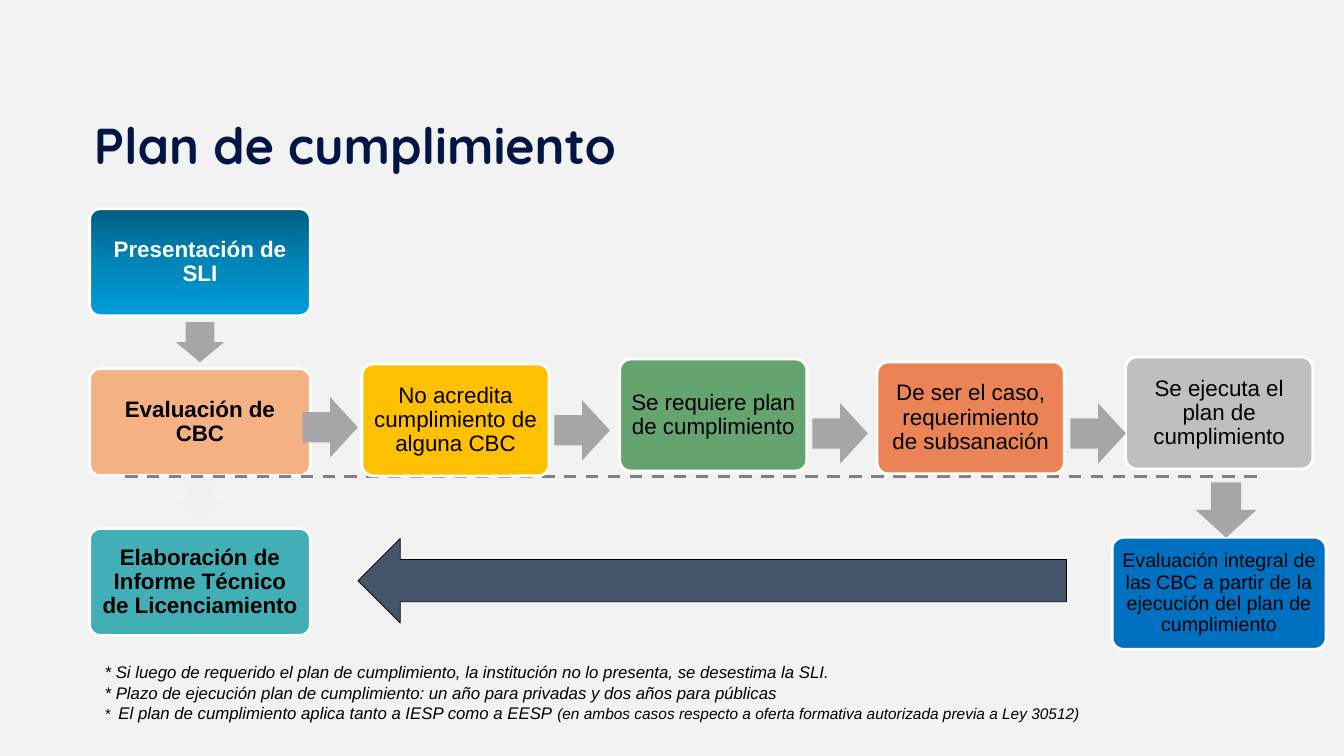
from copy import deepcopy

from lxml import etree
from pptx import Presentation
from pptx.dml.color import RGBColor
from pptx.enum.dml import MSO_LINE
from pptx.enum.shapes import MSO_CONNECTOR, MSO_SHAPE
from pptx.enum.text import MSO_ANCHOR, PP_ALIGN
from pptx.oxml.ns import qn
from pptx.util import Pt

CARD, ARROW = MSO_SHAPE.ROUNDED_RECTANGLE, MSO_SHAPE.RIGHT_ARROW
CENTER, LEFT = PP_ALIGN.CENTER, PP_ALIGN.LEFT
MIDDLE, TOP = MSO_ANCHOR.MIDDLE, MSO_ANCHOR.TOP

COLORS = {
    "background": "F2F2F2", "title": "011643", "black": "000000", "white": "FFFFFF",
    "deep": "005D81", "mid": "0084B7", "bright": "009DD9",
    "peach": "F4B183", "teal": "42AFB6", "yellow": "FFC000", "green": "65A36F",
    "orange": "EA8456", "silver": "BFBFBF", "blue": "0070C0",
    "arrow": "A6A6A6", "faint": "F1F0F0", "slate": "44546A", "dash": "808080",
}

# Content
TITLE = "Plan de cumplimiento"
STAGES = [  # text, fill, text colour
    ("Presentación de SLI", "deep", "white"),
    ("Evaluación de CBC", "peach", "black"),
    ("Elaboración de Informe Técnico de Licenciamiento", "teal", "black"),
]
STAGE_ARROWS = ["arrow", "faint"]
STEPS = [  # text, fill, left, top
    ("No acredita cumplimiento de alguna CBC", "yellow", 258.5, 260),
    ("Se requiere plan de cumplimiento", "green", 442.6, 256.5),
    ("De ser el caso, requerimiento de subsanación", "orange", 626.5, 258.5),
    ("Se ejecuta el plan de cumplimiento", "silver", 804, 255),
]
REVIEW = "Evaluación integral de las CBC a partir de la ejecución del plan de cumplimiento"
STEP_ARROWS = [  # left, top, rotation
    (216, 283.7, 0), (396, 285.8, 0), (580.3, 288, 0), (764.6, 288, 0), (856, 342.7, 90),
]
NOTES = [  # runs of (text, size)
    [("* Si luego de requerido el plan de cumplimiento, la institución no lo presenta, "
      "se desestima la SLI.", 12)],
    [("* Plazo de ejecución plan de cumplimiento: un año para privadas "
      "y dos años para públicas", 12)],
    [("*  ", 10.5), ("El plan de cumplimiento aplica tanto a IESP como a EESP", 12),
     (" (en ambos casos respecto a oferta formativa autorizada previa a Ley 30512)", 11)],
]

# Layout
STAGE_X, STAGE_Y, STAGE_W, STAGE_H, STAGE_PITCH = 64, 149.1, 157.7, 76.4, 114.2
STEP_W, STEP_H = 133.8, 80
DOWN_W, DOWN_H = 28.7, 34.4

prs = Presentation()
prs.slide_width, prs.slide_height = Pt(960), Pt(540)
s = prs.slides.add_slide(prs.slide_layouts[6])


def rgb(name):
    return RGBColor.from_string(COLORS[name])


s.background.fill.solid()
s.background.fill.fore_color.rgb = rgb("background")


def style_run(r, size, color, font="Arial", bold=False, italic=False):
    r.font.name, r.font.size = font, Pt(size)
    r.font.bold, r.font.italic = bold, italic
    r.font.color.rgb = rgb(color)


def add_shape(kind, box, fill, line=None, width=0, adjust=(), rotation=0):
    sp = s.shapes.add_shape(kind, *map(Pt, box))
    sp.shadow.inherit = False
    sp.rotation = rotation
    for i, value in enumerate(adjust):
        sp.adjustments[i] = value
    sp.fill.solid()
    sp.fill.fore_color.rgb = rgb(fill)
    if line:
        sp.line.color.rgb = rgb(line)
        sp.line.width = Pt(width)
    else:
        sp.line.fill.background()
    return sp


def add_card(text, box, fill, color="black", size=16, bold=False):
    sp = add_shape(CARD, box, fill, "white", 2, [0.1])
    tf = sp.text_frame
    tf.word_wrap, tf.vertical_anchor = True, MIDDLE
    tf.margin_left = tf.margin_right = tf.margin_top = tf.margin_bottom = Pt(5)
    tf.text = text
    p = tf.paragraphs[0]
    p.alignment, p.line_spacing = CENTER, 0.9
    style_run(p.runs[0], size, color, bold=bold)
    return sp


def add_text(box, anchor):
    tf = s.shapes.add_textbox(*map(Pt, box)).text_frame
    tf.word_wrap, tf.vertical_anchor = True, anchor
    return tf


# Title
tf = add_text((60, 81.4, 828, 49), MIDDLE)
tf.text = TITLE
tf.paragraphs[0].line_spacing = 0.9
style_run(tf.paragraphs[0].runs[0], 36, "title", "Quicksand", bold=True)

# Stages down the left side
stage_cards = [
    add_card(text, (STAGE_X, STAGE_Y + i * STAGE_PITCH, STAGE_W, STAGE_H), fill, color, bold=True)
    for i, (text, fill, color) in enumerate(STAGES)
]
gap = STAGE_PITCH - STAGE_H
for i, fill in enumerate(STAGE_ARROWS):
    middle = STAGE_Y + STAGE_H + i * STAGE_PITCH + gap / 2
    left = STAGE_X + (STAGE_W - DOWN_W) / 2
    add_shape(ARROW, (left, middle - DOWN_H / 2, DOWN_W, DOWN_H), fill,
              adjust=[0.6, 0.5], rotation=90)

# Three-stop gradient on the first stage
fill = stage_cards[0].fill
fill.gradient()
fill.gradient_angle = 270
for stop, name, position in zip(fill.gradient_stops, ("mid", "bright"), (0.5, 1)):
    stop.color.rgb = rgb(name)
    stop.position = position
stops = stage_cards[0]._element.spPr.find(".//" + qn("a:gsLst"))
stops.insert(0, deepcopy(stops[0]))
first = fill.gradient_stops[0]
first.color.rgb, first.position = rgb("deep"), 0

# Dashed divider
divider = s.shapes.add_connector(MSO_CONNECTOR.STRAIGHT, Pt(89.3), Pt(340.6), Pt(897.8), Pt(340.6))
divider.line.color.rgb = rgb("dash")
divider.line.width, divider.line.dash_style = Pt(2.25), MSO_LINE.DASH
etree.SubElement(divider._element.spPr, qn("a:effectLst"))

# Steps of the compliance plan
for text, fill, left, top in STEPS:
    add_card(text, (left, top, STEP_W, STEP_H), fill)
add_card(REVIEW, (794.4, 383.8, 152.8, STEP_H), "blue", size=14)
for left, top, rotation in STEP_ARROWS:
    add_shape(ARROW, (left, top, 39.6, 43.2), "arrow", rotation=rotation)

# Return arrow to the report
add_shape(ARROW, (255.6, 384.5, 506.2, 60.5), "slate", "black", 0.5, rotation=180)

# Footnotes
tf = add_text((67.7, 469.4, 851.8, 51), TOP)
for i, runs in enumerate(NOTES):
    p = tf.paragraphs[0] if i == 0 else tf.add_paragraph()
    p.alignment = LEFT
    for text, size in runs:
        r = p.add_run()
        r.text = text
        style_run(r, size, "black", italic=True)

prs.save("out.pptx")
